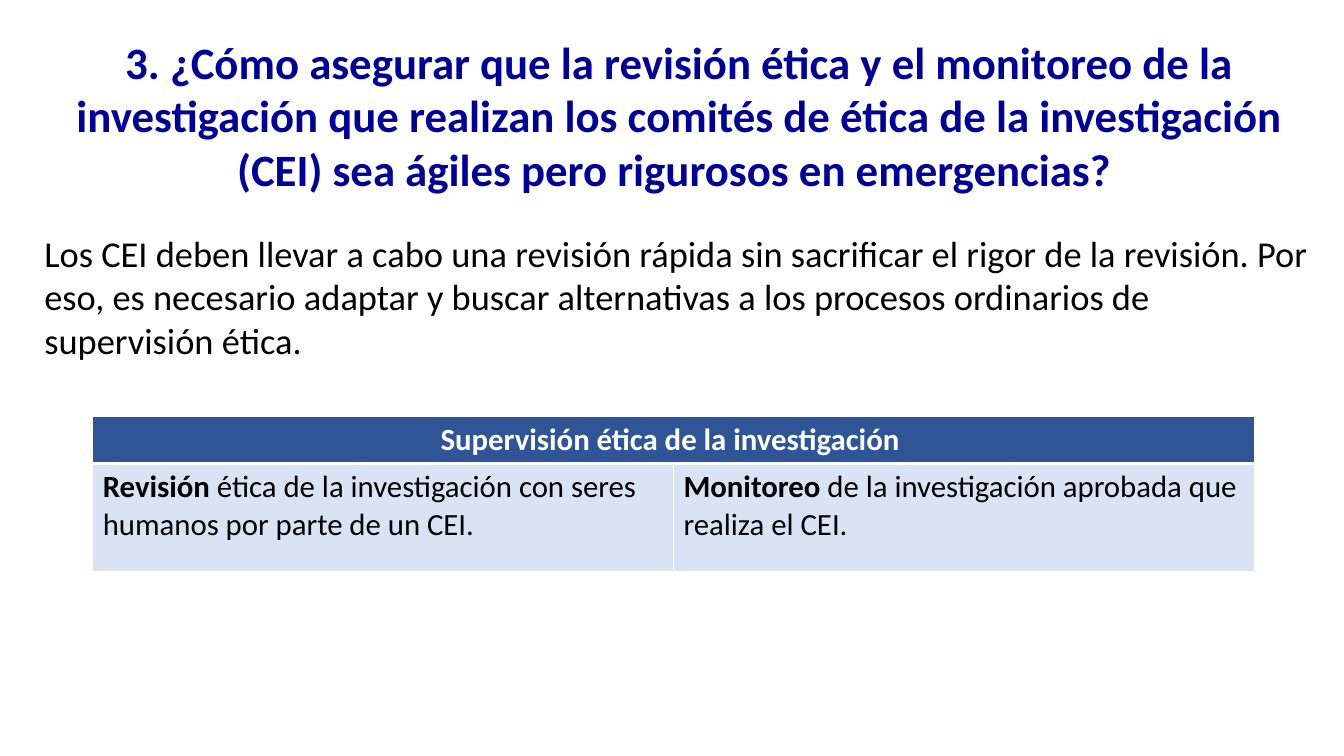
from dataclasses import dataclass
from lxml.etree import SubElement
from pptx import Presentation
from pptx.dml.color import RGBColor as Color
from pptx.enum.text import MSO_ANCHOR as Anchor, MSO_AUTO_SIZE as Auto, PP_ALIGN as Align
from pptx.oxml.ns import qn
from pptx.util import Inches, Pt

TITLE = "3. ¿Cómo asegurar que la revisión ética y el monitoreo de la investigación que realizan los comités de ética de la investigación (CEI) sea ágiles pero rigurosos en emergencias? "
BODY = "Los CEI deben llevar a cabo una revisión rápida sin sacrificar el rigor de la revisión. Por eso, es necesario adaptar y buscar alternativas a los procesos ordinarios de supervisión ética."
HEAD = "Supervisión ética de la investigación "
CELLS = [
    ("Revisión", " ética de la investigación con seres humanos por parte de un CEI. "),
    ("Monitoreo", " de la investigación aprobada que realiza el CEI."),
]


@dataclass(frozen=True)
class Theme:
    face: str = "Calibri"
    navy: str = "000099"
    black: str = "000000"
    white: str = "FFFFFF"
    blue: str = "2F5597"
    pale: str = "DAE3F3"
    title: int = 32
    body: int = 26
    cell: int = 22


LOOK = Theme()


def style(run, size, tint, bold=False):
    font = run.font
    font.name, font.size, font.bold = LOOK.face, Pt(size), bold
    font.color.rgb = Color.from_string(tint)


def place(shape, box, text, size, tint, bold, align):
    shape.left, shape.top, shape.width, shape.height = map(Inches, box)
    frame = shape.text_frame
    frame.text = text
    frame.word_wrap = True
    frame.auto_size = Auto.SHAPE_TO_FIT_TEXT
    frame.vertical_anchor = Anchor.TOP
    para = frame.paragraphs[0]
    props = para._p.get_or_add_pPr()
    props.set("marL", "0")
    props.set("indent", "0")
    SubElement(props, qn("a:buNone"))
    para.alignment = align
    para.space_before = Pt(0)
    style(para.runs[0], size, tint, bold)


def paint(cell, fill, base):
    cell.fill.solid()
    cell.fill.fore_color.rgb = Color.from_string(fill)
    props = cell._tc.get_or_add_tcPr()
    for spot, (side, width) in enumerate([("L", 1), ("R", 1), ("T", 1), ("B", base)]):
        line = SubElement(props, qn("a:ln" + side), w=str(Pt(width)))
        tint = SubElement(SubElement(line, qn("a:solidFill")), qn("a:srgbClr"))
        tint.set("val", LOOK.white)
        props.insert(spot, line)


def build():
    deck = Presentation()
    deck.slide_width, deck.slide_height = Inches(13.33), Inches(7.5)
    slide = deck.slides.add_slide(deck.slide_layouts[1])
    place(slide.shapes.title, (0.62, 0.29, 12.24, 1.72), TITLE,
          LOOK.title, LOOK.navy, True, Align.CENTER)
    place(slide.placeholders[1], (0.34, 2.24, 12.76, 1.41), BODY,
          LOOK.body, LOOK.black, False, Align.LEFT)

    box = map(Inches, (0.92, 4.13, 11.52, 1.54))
    table = slide.shapes.add_table(2, len(CELLS), *box).table
    for row, tall in zip(table.rows, (0.47, 1.07)):
        row.height = Inches(tall)
    for col in range(len(CELLS)):
        paint(table.cell(0, col), LOOK.blue, 3)
    head = table.cell(0, 0)
    head.merge(table.cell(0, len(CELLS) - 1))
    head.text_frame.text = HEAD
    para = head.text_frame.paragraphs[0]
    para.alignment = Align.CENTER
    style(para.runs[0], LOOK.cell, LOOK.white, True)

    for col, (lead, rest) in enumerate(CELLS):
        cell = table.cell(1, col)
        paint(cell, LOOK.pale, 1)
        para = cell.text_frame.paragraphs[0]
        for text, bold in ((lead, True), (rest, False)):
            run = para.add_run()
            run.text = text
            style(run, LOOK.cell, LOOK.black, bold)
    deck.save("out.pptx")


if __name__ == "__main__":
    build()
